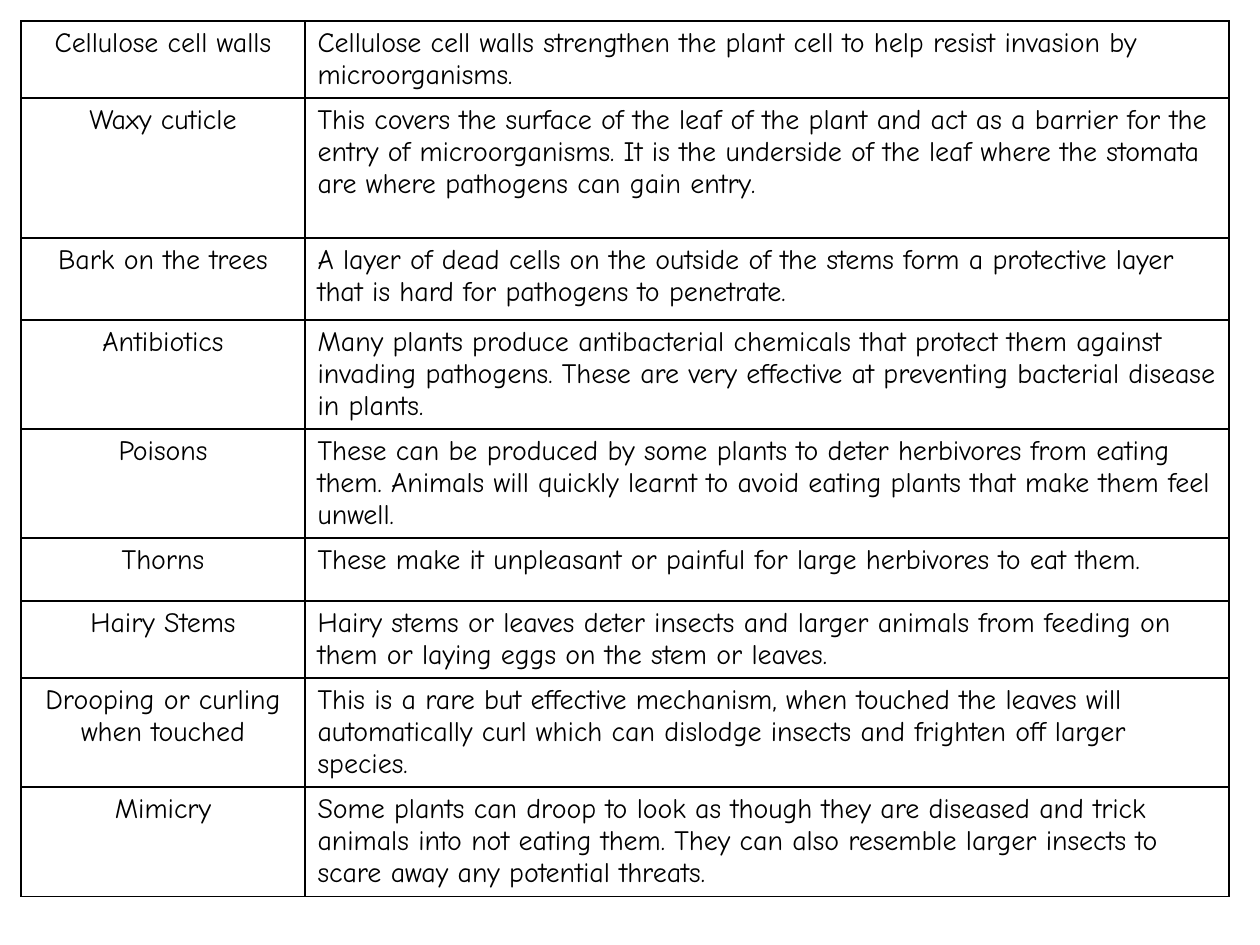
from dataclasses import dataclass

from lxml.etree import SubElement
from pptx import Presentation
from pptx.dml.color import RGBColor as Color
from pptx.enum.text import PP_ALIGN as Align
from pptx.oxml.ns import qn
from pptx.util import Emu, Pt


@dataclass(frozen=True)
class Theme:
    font: str = "Comic Neue"
    size: int = 16
    ink: str = "000000"
    paper: str = "FFFFFF"
    border: int = 1


theme = Theme()


def px(count):
    return Emu(round(count * 914400 / 126))


def write_cell(cell, text, *, align):
    cell.fill.solid()
    cell.fill.fore_color.rgb = Color.from_string(theme.paper)
    para = cell.text_frame.paragraphs[0]
    para.alignment = align
    span = para.add_run()
    span.text = text
    span.font.name = theme.font
    span.font.size = Pt(theme.size)
    span.font.color.rgb = Color.from_string(theme.ink)
    properties = cell._tc.get_or_add_tcPr()
    for index, side in enumerate(("a:lnL", "a:lnR", "a:lnT", "a:lnB")):
        line = SubElement(properties, qn(side), w=str(Pt(theme.border)))
        fill = SubElement(line, qn("a:solidFill"))
        SubElement(fill, qn("a:srgbClr"), val=theme.ink)
        properties.insert(index, line)


defences = [
    (77, "Cellulose cell walls",
     "Cellulose cell walls strengthen the plant cell to help resist invasion by "
     "microorganisms."),
    (140, "Waxy cuticle",
     "This covers the surface of the leaf of the plant and act as a barrier for the "
     "entry of microorganisms. It is the underside of the leaf where the stomata "
     "are where pathogens can gain entry."),
    (82, "Bark on the trees",
     "A layer of dead cells on the outside of the stems form a protective layer "
     "that is hard for pathogens to penetrate."),
    (109, "Antibiotics",
     "Many plants produce antibacterial chemicals that protect them against "
     "invading pathogens. These are very effective at preventing bacterial disease "
     "in plants."),
    (109, "Poisons",
     "These can be produced by some plants to deter herbivores from eating "
     "them. Animals will quickly learnt to avoid eating plants that make them feel "
     "unwell."),
    (63, "Thorns",
     "These make it unpleasant or painful for large herbivores to eat them."),
    (77, "Hairy Stems",
     "Hairy stems or leaves deter insects and larger animals from feeding on "
     "them or laying eggs on the stem or leaves."),
    (109, "Drooping or curling when touched",
     "This is a rare but effective mechanism, when touched the leaves will "
     "automatically curl which can dislodge insects and frighten off larger "
     "species."),
    (109, "Mimicry",
     "Some plants can droop to look as though they are diseased and trick "
     "animals into not eating them. They can also resemble larger insects to "
     "scare away any potential threats."),
]
column_widths = (284, 924)

deck = Presentation()
deck.slide_width = px(1260)
deck.slide_height = px(945)
page = deck.slides.add_slide(deck.slide_layouts[6])

table = page.shapes.add_table(
    len(defences), len(column_widths), px(21), px(21),
    px(sum(column_widths)), px(sum(height for height, _, _ in defences)),
).table
table.first_row = False
table.horz_banding = False

for column, width in zip(table.columns, column_widths):
    column.width = px(width)

for row, (height, defence, explanation) in zip(table.rows, defences):
    row.height = px(height)
    write_cell(row.cells[0], defence, align=Align.CENTER)
    write_cell(row.cells[1], explanation, align=Align.LEFT)

deck.save("out.pptx")
